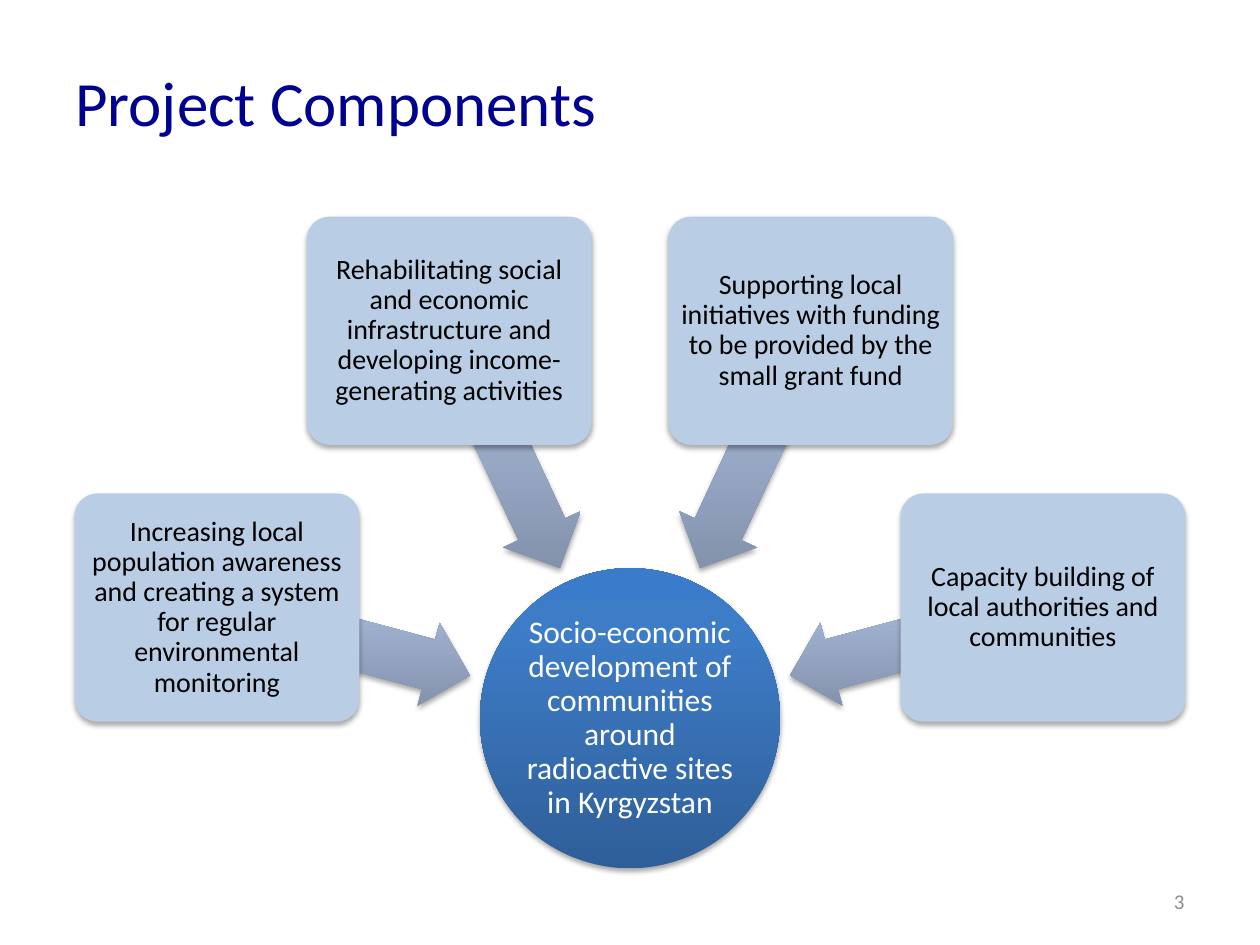
from math import cos, radians, sin

from lxml import etree
from pptx import Presentation
from pptx import util as u
from pptx.dml.color import RGBColor
from pptx.enum import shapes, text
from pptx.oxml import ns

TITLE = "Project Components"
PAGE = "3"
HUB = "Socio-economic development of communities around radioactive sites in Kyrgyzstan"
COMPONENTS = [
    "Increasing local population awareness and creating a system for regular environmental monitoring",
    "Rehabilitating social and economic infrastructure and developing income-generating activities",
    "Supporting local initiatives with funding to be provided by the small grant fund",
    "Capacity building of local authorities and communities",
]

FONT = "Calibri"
NAVY = RGBColor(0x00, 0x00, 0x90)
GREY = RGBColor(0x8C, 0x8C, 0x8C)
WHITE = RGBColor(0xFF, 0xFF, 0xFF)
BLACK = RGBColor(0x00, 0x00, 0x00)
PALE_BLUE = RGBColor(0xB9, 0xCD, 0xE5)
HUB_STOPS = [
    (0, RGBColor(0x2F, 0x5F, 0x99)),
    (80, RGBColor(0x3D, 0x7C, 0xC7)),
    (100, RGBColor(0x3A, 0x7C, 0xCB)),
]
ARROW_STOPS = [
    (0, RGBColor(0x81, 0x8F, 0xA8)),
    (80, RGBColor(0xA7, 0xB9, 0xDA)),
    (100, RGBColor(0xA7, 0xBA, 0xDC)),
]

CENTRE = (12.7, 14.48)
HUB_SIZE = (6.05, 6.05)
BOX_SIZE = (5.74, 4.6)
ARROW_SIZE = (5.28, 1.73)
BOX_RADIUS = 8.62
ARROW_RADIUS = 5.98
FIRST_ANGLE, ANGLE_STEP = 195, 50


def add_xml(parent, tag, **attrs):
    return etree.SubElement(parent, ns.qn(tag), {k: str(v) for k, v in attrs.items()})


def write(sp, words, size, color, align, inset=None, spacing=1.0):
    tf = sp.text_frame
    tf.word_wrap = True
    tf.vertical_anchor = text.MSO_ANCHOR.MIDDLE
    if inset is not None:
        for side in ("left", "top", "right", "bottom"):
            setattr(tf, f"margin_{side}", u.Cm(inset))
    p = tf.paragraphs[0]
    p.alignment = align
    p.line_spacing = spacing
    r = p.add_run()
    r.text = words
    for name, value in {"name": FONT, "size": u.Pt(size)}.items():
        setattr(r.font, name, value)
    r.font.color.rgb = color


def add_label(s, box, *style):
    write(s.shapes.add_textbox(*map(u.Cm, box)), *style)


def paint_gradient(sp, stops):
    sp.fill.gradient()
    grad = sp.element.spPr.find(ns.qn("a:gradFill"))
    grad.clear()
    grad.set("rotWithShape", "0")
    stop_list = add_xml(grad, "a:gsLst")
    for percent, color in stops:
        stop = add_xml(stop_list, "a:gs", pos=percent * 1000)
        add_xml(stop, "a:srgbClr", val=color)
    add_xml(grad, "a:lin", ang=270 * 60000, scaled=0)


def add_shadow(sp):
    sp.shadow.inherit = False
    effects = sp.element.spPr.find(ns.qn("a:effectLst"))
    shadow = add_xml(effects, "a:outerShdw", blurRad=u.Pt(3.1), dist=u.Pt(1.8),
                     dir=90 * 60000, rotWithShape=0)
    color = add_xml(shadow, "a:srgbClr", val=BLACK)
    add_xml(color, "a:alpha", val=35000)


def add_part(s, kind, size, fill, angle=0, radius=0):
    left, top = (c + radius * f(radians(angle)) - d / 2
                 for c, f, d in zip(CENTRE, (cos, sin), size))
    sp = s.shapes.add_shape(kind, *map(u.Cm, (left, top, *size)))
    if isinstance(fill, RGBColor):
        sp.fill.solid()
        sp.fill.fore_color.rgb = fill
    else:
        paint_gradient(sp, fill)
    sp.line.fill.background()
    add_shadow(sp)
    return sp


def main():
    prs = Presentation()
    prs.slide_width, prs.slide_height = u.Cm(25.4), u.Cm(19.05)
    s = prs.slides.add_slide(prs.slide_layouts[6])
    kinds, align = shapes.MSO_SHAPE, text.PP_ALIGN

    add_label(s, (1.27, 0.76, 22.86, 2.57), TITLE, 36, NAVY, align.LEFT)
    add_label(s, (18.2, 17.66, 5.93, 1.01), PAGE, 12, GREY, align.RIGHT)

    hub = add_part(s, kinds.OVAL, HUB_SIZE, HUB_STOPS)
    write(hub, HUB, 18, WHITE, align.CENTER, 0.03, 0.9)

    for i, words in enumerate(COMPONENTS):
        angle = FIRST_ANGLE + i * ANGLE_STEP
        arrow = add_part(s, kinds.LEFT_ARROW, ARROW_SIZE, ARROW_STOPS, angle, ARROW_RADIUS)
        arrow.rotation = angle
        arrow.adjustments[0], arrow.adjustments[1] = 0.6, 0.5
        box = add_part(s, kinds.ROUNDED_RECTANGLE, BOX_SIZE, PALE_BLUE, angle, BOX_RADIUS)
        box.adjustments[0] = 0.1
        write(box, words, 16, BLACK, align.CENTER, 0.08, 0.9)

    prs.save("out.pptx")


if __name__ == "__main__":
    main()
